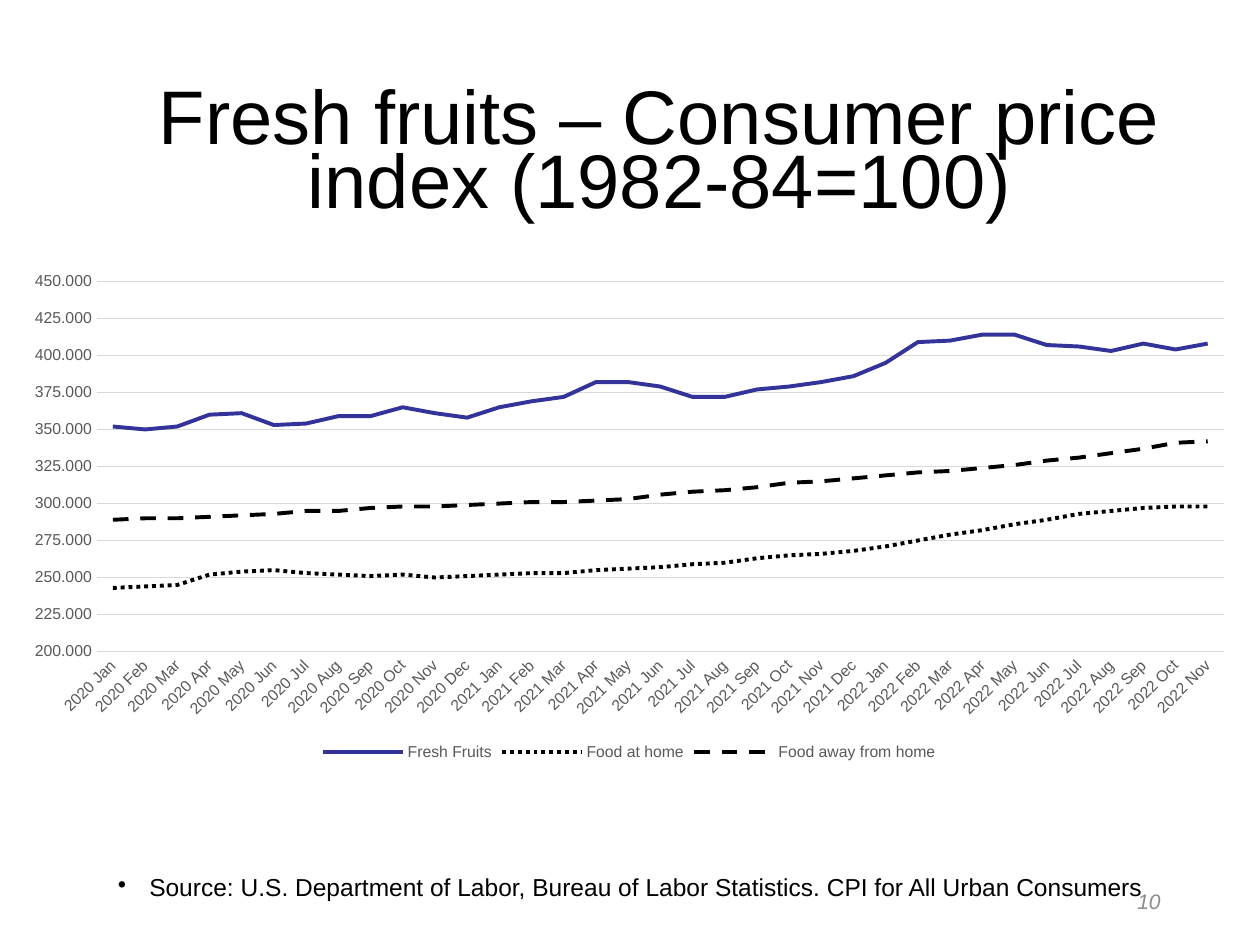
from pptx import Presentation
from pptx import util as u
from pptx.chart.data import CategoryChartData
from pptx.dml.color import RGBColor
from pptx.enum import chart as charts, dml, text
from pptx.oxml import ns, xmlchemy

FONT = "Arial"
MONTHS = "Jan Feb Mar Apr May Jun Jul Aug Sep Oct Nov Dec".split()
CATEGORIES = [f"{year} {month}" for year in (2020, 2021, 2022) for month in MONTHS][:35]

# Name, colour, dash style and monthly index values
SERIES = [
    ("Fresh Fruits", "333399", dml.MSO_LINE.SOLID,
     [352, 350, 352, 360, 361, 353, 354, 359, 359, 365, 361, 358,
      365, 369, 372, 382, 382, 379, 372, 372, 377, 379, 382, 386,
      395, 409, 410, 414, 414, 407, 406, 403, 408, 404, 408]),
    ("Food at home", "000000", dml.MSO_LINE.ROUND_DOT,
     [243, 244, 245, 252, 254, 255, 253, 252, 251, 252, 250, 251,
      252, 253, 253, 255, 256, 257, 259, 260, 263, 265, 266, 268,
      271, 275, 279, 282, 286, 289, 293, 295, 297, 298, 298]),
    ("Food away from home", "000000", dml.MSO_LINE.DASH,
     [289, 290, 290, 291, 292, 293, 295, 295, 297, 298, 298, 299,
      300, 301, 301, 302, 303, 306, 308, 309, 311, 314, 315, 317,
      319, 321, 322, 324, 326, 329, 331, 334, 337, 341, 342]),
]


def color(value):
    return RGBColor.from_string(value)


class SlideBuilder:
    def __init__(self, slide):
        self.slide = slide

    def style_font(self, font, size, fill, italic=False):
        font.name = FONT
        font.size = u.Pt(size)
        font.bold = False
        font.italic = italic
        font.color.rgb = color(fill)

    def style_line(self, line, fill, width):
        line.color.rgb = color(fill)
        line.width = u.Pt(width)

    def fill_text(self, shape, box, words, size, fill="000000", align=text.PP_ALIGN.CENTER,
                  spacing=1.0, bullet=False, italic=False):
        shape.left, shape.top, shape.width, shape.height = map(u.Inches, box)
        frame = shape.text_frame
        frame.word_wrap = True
        frame.auto_size = text.MSO_AUTO_SIZE.NONE
        frame.vertical_anchor = text.MSO_ANCHOR.MIDDLE
        paragraph = frame.paragraphs[0]
        paragraph.alignment = align
        paragraph.line_spacing = spacing
        paragraph.space_before = u.Pt(0)
        paragraph.space_after = u.Pt(6)
        if bullet:
            frame.margin_left = frame.margin_right = u.Inches(0.05)
            properties = paragraph._p.get_or_add_pPr()
            properties.set("marL", str(u.Inches(0.25)))
            properties.set("indent", str(-u.Inches(0.25)))
            mark = xmlchemy.OxmlElement("a:buChar")
            mark.set("char", "•")
            properties.append(mark)
        run = paragraph.add_run()
        run.text = words
        self.style_font(run.font, size, fill, italic)

    def title(self, box, words, size, **options):
        self.fill_text(self.slide.shapes.title, box, words, size, **options)

    def text_box(self, box, words, size, **options):
        shape = self.slide.shapes.add_textbox(*map(u.Inches, box))
        self.fill_text(shape, box, words, size, **options)

    def line_chart(self, box, categories, series_list):
        data = CategoryChartData(number_format="#0.000")
        data.categories = categories
        for name, _, _, values in series_list:
            data.add_series(name, values)
        chart = self.slide.shapes.add_chart(
            charts.XL_CHART_TYPE.LINE, *map(u.Inches, box), data).chart
        chart.has_title = False
        self.style_font(chart.font, 10, "000000")
        chart.plots[0].vary_by_categories = False

        for series, (_, fill, dash, _) in zip(chart.plots[0].series, series_list):
            series.smooth = False
            series.marker.style = charts.XL_MARKER_STYLE.NONE
            self.style_line(series.format.line, fill, 2.25)
            series.format.line.dash_style = dash

        # Axes
        for axis in (chart.category_axis, chart.value_axis):
            axis.major_tick_mark = axis.minor_tick_mark = charts.XL_TICK_MARK.NONE
            self.style_font(axis.tick_labels.font, 9, "595959")
        category_axis, value_axis = chart.category_axis, chart.value_axis
        self.style_line(category_axis.format.line, "D9D9D9", 0.75)
        label_body = category_axis._element.find(ns.qn("c:txPr")).find(ns.qn("a:bodyPr"))
        label_body.set("rot", "-2700000")
        value_axis.minimum_scale, value_axis.maximum_scale = 200, 450
        value_axis.major_unit = 25
        value_axis.format.line.fill.background()
        value_axis.tick_labels.number_format = "#0.000"
        value_axis.tick_labels.number_format_is_linked = False
        self.style_line(value_axis.major_gridlines.format.line, "D9D9D9", 0.75)

        # Legend
        chart.has_legend = True
        chart.legend.position = charts.XL_LEGEND_POSITION.BOTTOM
        chart.legend.include_in_layout = False
        self.style_font(chart.legend.font, 9, "595959")


def main():
    presentation = Presentation()
    presentation.slide_width, presentation.slide_height = u.Inches(10), u.Inches(7.5)
    builder = SlideBuilder(presentation.slides.add_slide(presentation.slide_layouts[5]))

    # Title
    builder.title((0.83, 0.64, 8.81, 1.22),
                  "Fresh fruits – Consumer price index (1982-84=100)", 43.4, spacing=0.7)

    # Source and slide number
    builder.text_box((0.83, 6.8, 8.35, 0.51),
                     "Source: U.S. Department of Labor, Bureau of Labor Statistics. "
                     "CPI for All Urban Consumers", 14, spacing=0.9, bullet=True)
    builder.text_box((7.06, 6.95, 2.25, 0.4), "10", 12, fill="8C8C8C",
                     align=text.PP_ALIGN.RIGHT, italic=True)

    # Price index chart
    builder.line_chart((0.08, 2.08, 9.83, 4), CATEGORIES, SERIES)

    presentation.save("out.pptx")


if __name__ == "__main__":
    main()
